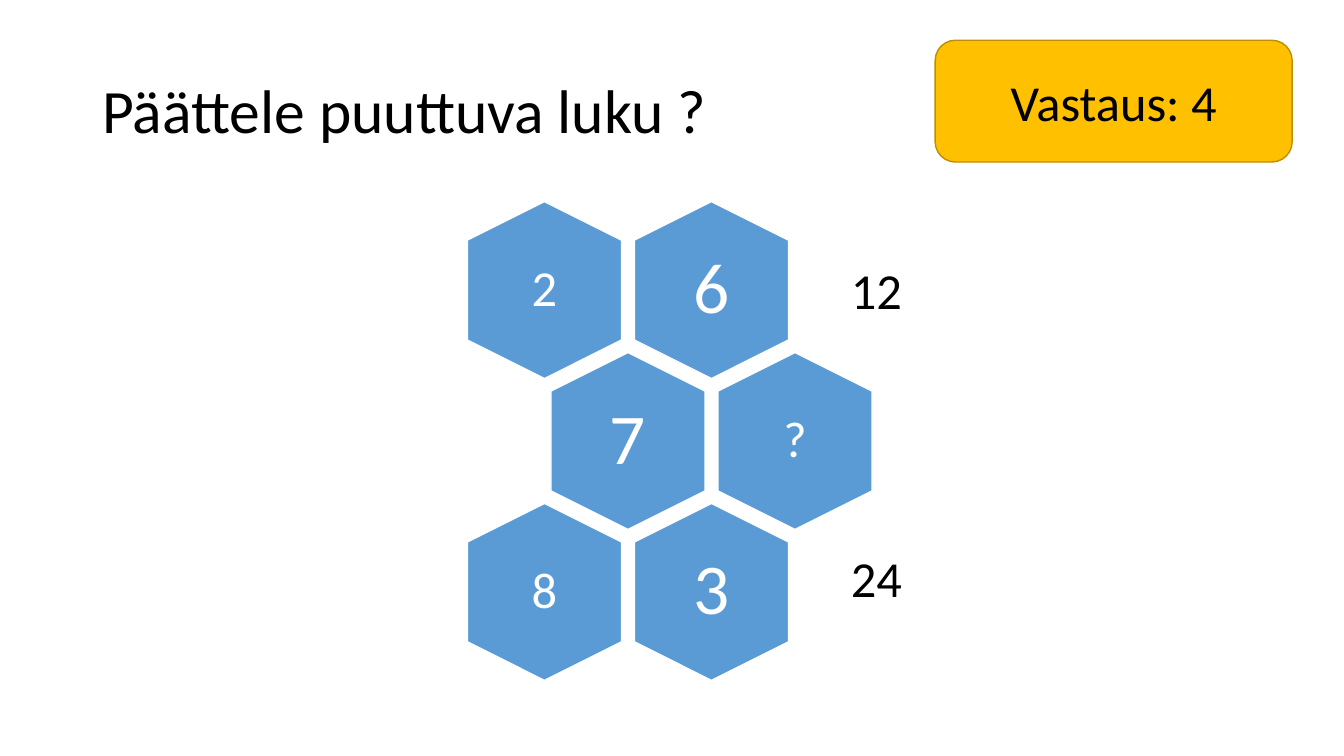
from dataclasses import dataclass

from pptx import Presentation
from pptx.dml.color import RGBColor
from pptx.enum.shapes import MSO_SHAPE
from pptx.enum.text import MSO_ANCHOR, MSO_AUTO_SIZE, PP_ALIGN
from pptx.shapes.autoshape import Shape
from pptx.slide import Slide
from pptx.util import Pt

HEXAGON, ROUNDED = MSO_SHAPE.HEXAGON, MSO_SHAPE.ROUNDED_RECTANGLE
LEFT, CENTER = PP_ALIGN.LEFT, PP_ALIGN.CENTER
MIDDLE = MSO_ANCHOR.MIDDLE
NO_FIT = MSO_AUTO_SIZE.NONE
TITLE_ONLY = 5

FONT = "Calibri"
COLORS = {
    "text": "000000",
    "white": "FFFFFF",
    "hexagon": "5B9BD5",
    "answer": "FFC000",
    "answer_line": "BD8E00",
}

# Honeycomb: centre of the first cell and the steps between cells, in points
FIRST_X, FIRST_Y = 388.9, 207.2
STEP_X, STEP_Y = 119.3, 107.8
HEXAGON_LENGTH, HEXAGON_BREADTH = 126.4, 110
LABEL_WIDTH, LABEL_HEIGHT = 76.3, 87.2


@dataclass(frozen=True)
class Cell:
    row: int
    column: int
    text: str
    size: int


@dataclass(frozen=True)
class RowResult:
    text: str
    top: float


CELLS = [
    Cell(0, 1, "6", 51),
    Cell(0, 0, "2", 36),
    Cell(1, 0, "7", 51),
    Cell(1, 1, "?", 36),
    Cell(2, 1, "3", 51),
    Cell(2, 0, "8", 36),
]
RESULTS = [RowResult("12", 171.4), RowResult("24", 377.3)]


def rgb(name: str) -> RGBColor:
    return RGBColor.from_string(COLORS[name])


def write(box: Shape, text: str, size: int, color: str, align: PP_ALIGN,
          spacing: float = 0.9) -> None:
    frame = box.text_frame
    frame.word_wrap = True
    frame.auto_size = NO_FIT
    frame.vertical_anchor = MIDDLE
    frame.text = text
    para = frame.paragraphs[0]
    para.alignment = align
    para.line_spacing = spacing
    para.font.name = FONT
    para.font.size = Pt(size)
    para.font.color.rgb = rgb(color)


def paint(shape: Shape, fill: str, line: str) -> None:
    shape.shadow.inherit = False
    shape.fill.solid()
    shape.fill.fore_color.rgb = rgb(fill)
    shape.line.color.rgb = rgb(line)
    shape.line.width = Pt(1)


def set_margins(box: Shape, margin: float) -> None:
    frame = box.text_frame
    frame.margin_left = frame.margin_right = Pt(margin)
    frame.margin_top = frame.margin_bottom = Pt(margin)


def add_title(page: Slide, text: str) -> None:
    title = page.shapes.title
    title.left, title.top = Pt(66), Pt(28.75)
    title.width, title.height = Pt(828), Pt(104.4)
    write(title, text, 44, "text", LEFT)


def add_cell(page: Slide, cell: Cell) -> None:
    """Draw an upright hexagon with its label; odd rows shift half a step."""
    x = FIRST_X + (cell.column + cell.row % 2 / 2) * STEP_X
    y = FIRST_Y + cell.row * STEP_Y
    hexagon = page.shapes.add_shape(
        HEXAGON, Pt(x - HEXAGON_LENGTH / 2), Pt(y - HEXAGON_BREADTH / 2),
        Pt(HEXAGON_LENGTH), Pt(HEXAGON_BREADTH))
    hexagon.rotation = 90
    hexagon.adjustments[0] = 0.25
    hexagon.adjustments[1] = 1.1547
    paint(hexagon, "hexagon", "white")

    label = page.shapes.add_textbox(
        Pt(x - LABEL_WIDTH / 2), Pt(y - LABEL_HEIGHT / 2),
        Pt(LABEL_WIDTH), Pt(LABEL_HEIGHT))
    set_margins(label, 0)
    write(label, cell.text, cell.size, "white", CENTER)


def add_result(page: Slide, result: RowResult) -> None:
    box = page.shapes.add_textbox(Pt(597), Pt(result.top), Pt(142), Pt(76.3))
    set_margins(box, 10.8)
    write(box, result.text, 36, "text", LEFT)


def add_answer(page: Slide, text: str) -> None:
    answer = page.shapes.add_shape(ROUNDED, Pt(668), Pt(28.75), Pt(255), Pt(87))
    paint(answer, "answer", "answer_line")
    write(answer, text, 36, "text", CENTER, spacing=1.0)


def main() -> None:
    deck = Presentation()
    deck.slide_width, deck.slide_height = Pt(960), Pt(540)
    page = deck.slides.add_slide(deck.slide_layouts[TITLE_ONLY])
    add_title(page, "Päättele puuttuva luku ?")
    for cell in CELLS:
        add_cell(page, cell)
    for result in RESULTS:
        add_result(page, result)
    add_answer(page, "Vastaus: 4")
    deck.save("out.pptx")


if __name__ == "__main__":
    main()
